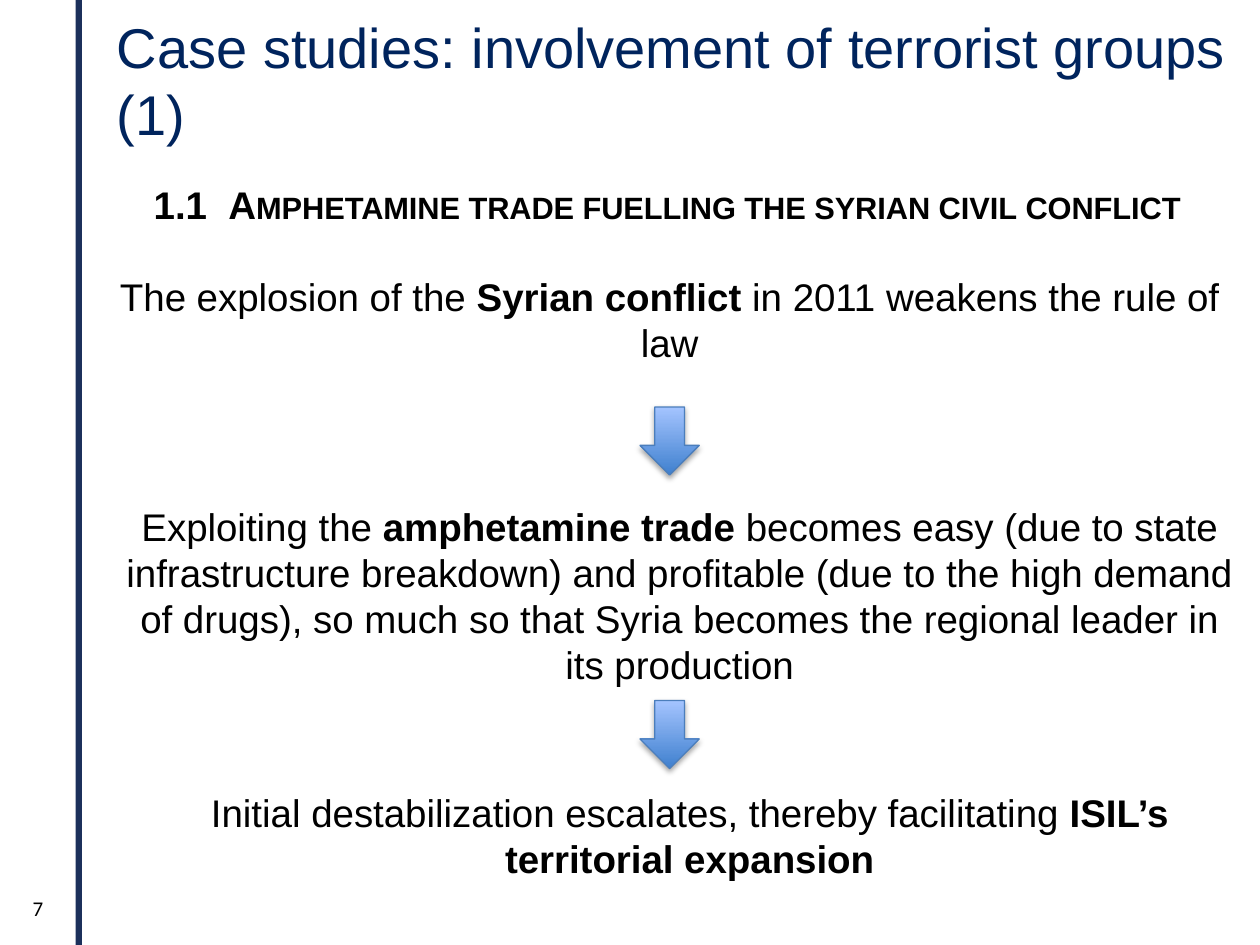
from lxml import etree
from pptx import Presentation
from pptx.dml.color import RGBColor
from pptx.enum.shapes import MSO_SHAPE as SHAPE
from pptx.enum.text import PP_ALIGN as ALIGN
from pptx.oxml.ns import qn
from pptx.util import Inches, Pt

NAVY, BLACK = "00245D", "000000"
TITLE = "Case studies: involvement of terrorist groups (1)"
HEADING = [("1.1  ", "b"), ("Amphetamine trade fuelling the syrian civil conflict", "bs")]
STEPS = [
    ((0.75, 2.12, 9.13, 0.54), [
        ("The explosion of the ", ""), ("Syrian conflict", "b"),
        (" in 2011 weakens the rule of law", "")]),
    ((0.83, 3.94, 9.13, 1.05), [
        ("Exploiting the ", ""), ("amphetamine trade", "b"),
        (" becomes easy (due to state infrastructure breakdown) and profitable "
         "(due to the high demand of drugs), so much so that Syria becomes the "
         "regional leader in its production", "")]),
    ((0.91, 6.21, 9.13, 1.05), [
        ("Initial destabilization escalates, thereby facilitating ", ""),
        ("ISIL’s territorial expansion", "b")]),
]
ARROW_TOPS = [3.23, 5.56]


def rgb(value):
    """Turn a hex string into a colour."""
    return RGBColor.from_string(value)


def add_text(s, box, runs, size=22, color=BLACK, font="Arial", align=ALIGN.CENTER):
    """Add a wrapped text box; run flags are b for bold and s for small caps."""
    tf = s.shapes.add_textbox(*map(Inches, box)).text_frame
    tf.word_wrap = True
    p = tf.paragraphs[0]
    p.alignment = align
    for text, flags in runs:
        r = p.add_run()
        r.text = text
        r.font.name, r.font.size = font, Pt(size)
        r.font.bold = "b" in flags
        r.font.color.rgb = rgb(color)
        if "s" in flags:
            r.font._element.set("cap", "small")


def add_bar(s):
    """Add the vertical bar at the left."""
    sp = s.shapes.add_shape(SHAPE.RECTANGLE, *map(Inches, (0.6, 0, 0.05, 7.5)))
    sp.shadow.inherit = False
    sp.fill.solid()
    sp.fill.fore_color.rgb = rgb("1C305B")
    sp.line.fill.background()


def add_arrow(s, top):
    """Add a shaded down arrow with a soft shadow."""
    sp = s.shapes.add_shape(SHAPE.DOWN_ARROW, *map(Inches, (5.08, top, 0.47, 0.54)))
    sp.fill.gradient()
    sp.fill.gradient_angle = 90
    for stop, color in zip(sp.fill.gradient_stops, ("3F80CE", "A4C4FF")):
        stop.color.rgb = rgb(color)
    sp.line.color.rgb = rgb("4B7EBC")
    sp.line.width = Pt(0.75)
    sp.shadow.inherit = False
    effects = sp._element.spPr.find(qn("a:effectLst"))
    shadow = etree.SubElement(effects, qn("a:outerShdw"), blurRad=str(Pt(3.1)),
                              dist=str(Pt(1.8)), dir="5400000", rotWithShape="0")
    color = etree.SubElement(shadow, qn("a:srgbClr"), val=BLACK)
    etree.SubElement(color, qn("a:alpha"), val="35000")


def main():
    """Build the slide."""
    prs = Presentation()
    prs.slide_width, prs.slide_height = Inches(10), Inches(7.5)
    s = prs.slides.add_slide(prs.slide_layouts[6])
    add_bar(s)
    add_text(s, (0.83, 0.05, 9.17, 0.58), [(TITLE, "")], 32, NAVY, align=ALIGN.LEFT)
    add_text(s, (0.95, 1.39, 8.69, 0.62), HEADING)
    add_text(s, (0.16, 7.06, 0.45, 0.4), [("7", "")], 12, font="Calibri", align=ALIGN.LEFT)
    for box, runs in STEPS:
        add_text(s, box, runs)
    for top in ARROW_TOPS:
        add_arrow(s, top)
    prs.save("out.pptx")


if __name__ == "__main__":
    main()
